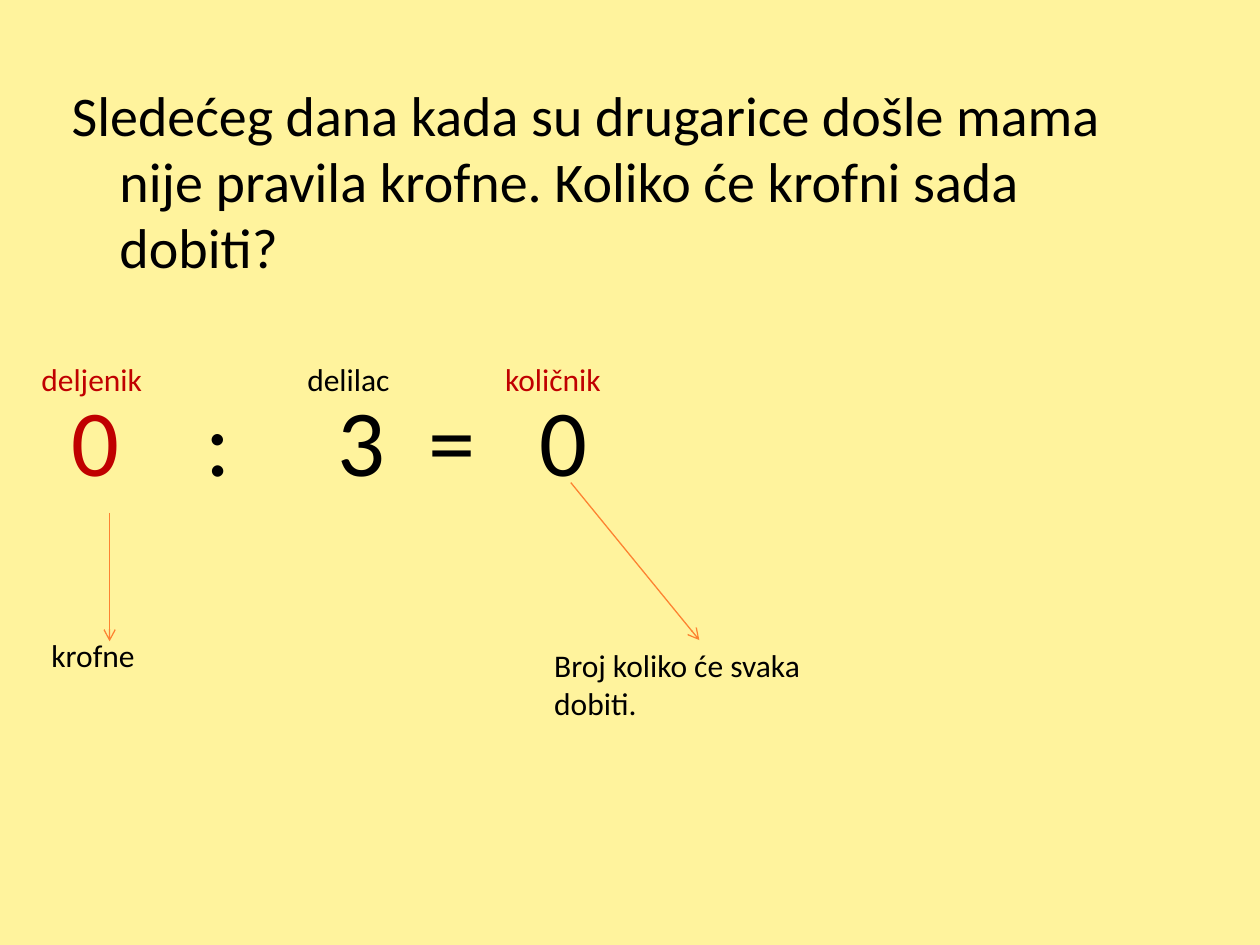
from pptx import Presentation
from pptx.dml.color import RGBColor
from pptx.enum.shapes import MSO_CONNECTOR
from pptx.oxml.ns import qn
from pptx.util import Inches, Pt
from lxml import etree

STRAIGHT = MSO_CONNECTOR.STRAIGHT
FONT = "Calibri"
COLORS = {"paper": "FFF39D", "ink": "000000", "red": "C00000", "arrow": "FD8231"}


def color(name):
    """Return the named colour."""
    return RGBColor.from_string(COLORS[name])


def style(font, size, ink):
    """Set typeface, size and colour."""
    font.name, font.size = FONT, Pt(size)
    font.color.rgb = color(ink)


def add_frame(slide, left, top, width, height):
    """Add a wrapping text box and return its text frame."""
    frame = slide.shapes.add_textbox(
        Inches(left), Inches(top), Inches(width), Inches(height)).text_frame
    frame.word_wrap = True
    return frame


def add_label(slide, text, left, top, width=1.09, height=0.4, ink="ink"):
    """Add a small caption."""
    paragraph = add_frame(slide, left, top, width, height).paragraphs[0]
    paragraph.text = text
    style(paragraph.font, 18, ink)


def add_arrow(slide, x1, y1, x2, y2):
    """Add a thin line with an open arrowhead at its end."""
    arrow = slide.shapes.add_connector(
        STRAIGHT, Inches(x1), Inches(y1), Inches(x2), Inches(y2))
    arrow.line.color.rgb = color("arrow")
    arrow.line.width = Pt(0.75)
    etree.SubElement(arrow.line._get_or_add_ln(), qn("a:tailEnd"), type="arrow")
    etree.SubElement(arrow._element.spPr, qn("a:effectLst"))


def add_problem(slide, left, top, width, height):
    """Add the question and the division below it."""
    frame = add_frame(slide, left, top, width, height)
    question = frame.paragraphs[0]
    question.text = ("Sledećeg dana kada su drugarice došle mama nije pravila "
                     "krofne. Koliko će krofni sada dobiti?")
    question.line_spacing = 0.98
    question.space_before = Pt(6.4)
    style(question.font, 32, "ink")
    hanging = question._p.get_or_add_pPr()
    hanging.set("marL", str(Inches(0.38)))
    hanging.set("indent", str(Inches(-0.38)))

    division = frame.add_paragraph()
    division.space_before = Pt(57)
    tabs = etree.SubElement(division._p.get_or_add_pPr(), qn("a:tabLst"))
    for stop in (1.06, 2.11, 2.83, 3.71):
        etree.SubElement(tabs, qn("a:tab"), pos=str(Inches(stop)), algn="l")
    for text, ink in (("0", "red"), ("\t:\t3\t=\t0", "ink")):
        run = division.add_run()
        run.text = text
        style(run.font, 54, ink)


def add_terms(slide, left, top):
    """Name the parts of the division in a row."""
    for text, offset, ink in (("deljenik", 0, "red"), ("delilac", 2.11, "ink"),
                              ("količnik", 3.68, "red")):
        add_label(slide, text, left + offset, top, ink=ink)


def add_meanings(slide, left, top):
    """Point from the numbers to what they stand for."""
    add_arrow(slide, left + 4.22, top, left + 5.24, top + 1.25)
    add_arrow(slide, left + 0.56, top + 0.24, left + 0.56, top + 1.26)
    add_label(slide, "krofne", left, top + 1.17)
    add_label(slide, "Broj koliko će svaka dobiti.", left + 3.99, top + 1.25, 2.19, 0.71)


def main():
    """Build and save the slide."""
    deck = Presentation()
    deck.slide_width, deck.slide_height = Inches(10), Inches(7.5)
    slide = deck.slides.add_slide(deck.slide_layouts[6])
    slide.background.fill.solid()
    slide.background.fill.fore_color.rgb = color("paper")
    add_problem(slide, 0.47, 0.62, 9, 6.17)
    add_terms(slide, 0.23, 2.81)
    add_meanings(slide, 0.31, 3.83)
    deck.save("out.pptx")


if __name__ == "__main__":
    main()
